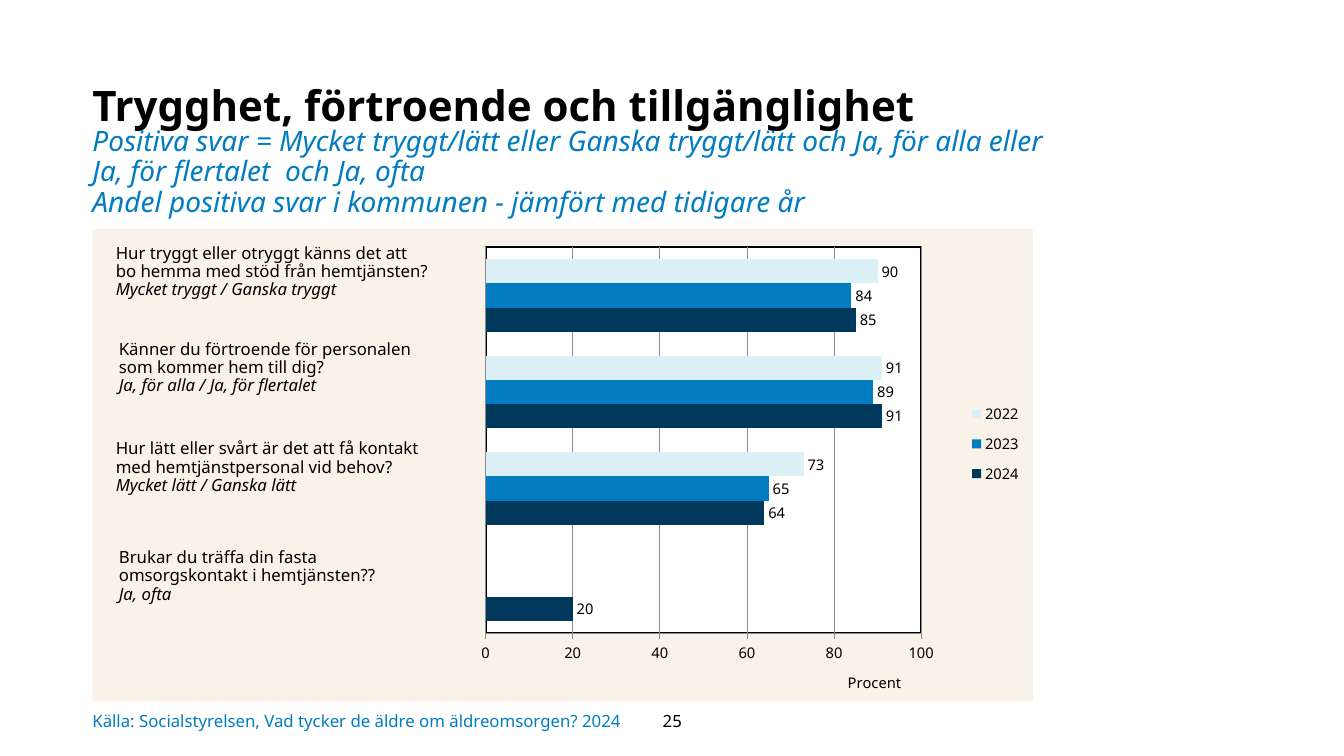
import pptx
import pptx.chart.data
import pptx.dml.color
import pptx.enum.chart
import pptx.enum.text
import pptx.oxml
import pptx.oxml.ns
import pptx.util

Pt = pptx.util.Pt
RGBColor = pptx.dml.color.RGBColor
FONT = "Noto Sans"
BLACK = RGBColor(0x00, 0x00, 0x00)
BLUE = RGBColor(0x01, 0x7C, 0xC1)
NAVY = RGBColor(0x00, 0x38, 0x5C)
PALE_BLUE = RGBColor(0xDB, 0xF0, 0xF6)
GREY = RGBColor(0x8C, 0x8C, 0x8C)
CREAM = RGBColor(0xF8, 0xF2, 0xE8)
WHITE = RGBColor(0xFF, 0xFF, 0xFF)

deck = pptx.Presentation()
deck.slide_width, deck.slide_height = Pt(960), Pt(540)
page = deck.slides.add_slide(deck.slide_layouts[6])


def add_text(left, top, width, height, lines, size, color=BLACK, bold=False,
             spacing=1.0, inset=0, middle=False):
    """Add a text box; lines holds (text, italic) pairs, one per paragraph."""
    box = page.shapes.add_textbox(Pt(left), Pt(top), Pt(width), Pt(height))
    frame = box.text_frame
    frame.word_wrap = True
    frame.margin_left = frame.margin_right = Pt(inset)
    frame.margin_top = frame.margin_bottom = Pt(inset / 2)
    if middle:
        frame.vertical_anchor = pptx.enum.text.MSO_ANCHOR.MIDDLE
    for index, (text, italic) in enumerate(lines):
        para = frame.add_paragraph() if index else frame.paragraphs[0]
        para.text = text
        para.line_spacing = spacing
        font = para.font
        font.name, font.size, font.bold, font.italic = FONT, Pt(size), bold, italic
        font.color.rgb = color
    return box


def set_layout(element, index, left, top, width=None, height=None, inner=False):
    """Place a chart part by fractions of the chart's size."""
    for old in element.findall(pptx.oxml.ns.qn("c:layout")):
        element.remove(old)
    values = {"x": left, "y": top, "w": width, "h": height}
    shown = {key: value for key, value in values.items() if value is not None}
    target = '<c:layoutTarget val="inner"/>' if inner else ""
    modes = "".join(f'<c:{key}Mode val="edge"/>' for key in shown if key in "xy")
    sizes = "".join(f'<c:{key} val="{value}"/>' for key, value in shown.items())
    element.insert(index, pptx.oxml.parse_xml(
        f'<c:layout {pptx.oxml.ns.nsdecls("c")}><c:manualLayout>'
        f"{target}{modes}{sizes}</c:manualLayout></c:layout>"))


add_text(66, 53.5, 718, 40, [("Trygghet, förtroende och tillgänglighet", False)],
         30, bold=True, spacing=1.1)
add_text(66, 91, 697, 75, [
    ("Positiva svar = Mycket tryggt/lätt eller Ganska tryggt/lätt och Ja, för alla "
     "eller Ja, för flertalet  och Ja, ofta", True),
    ("Andel positiva svar i kommunen - jämfört med tidigare år", True),
], 20, BLUE, spacing=0.9)

# Categories run from the bottom of the chart upwards
data = pptx.chart.data.CategoryChartData()
data.categories = ["1", "2", "3", "4"]
data.add_series("2024", (20, 64, 91, 85))
data.add_series("2023", (None, 65, 89, 84))
data.add_series("2022", (None, 73, 91, 90))
chart = page.shapes.add_chart(pptx.enum.chart.XL_CHART_TYPE.BAR_CLUSTERED,
                              Pt(66), Pt(163.5), Pt(672), Pt(337.5), data).chart
chart.has_title = False
chart.font.name, chart.font.size = FONT, Pt(10.5)
chart.font.color.rgb = BLACK

plot = chart.plots[0]
plot.gap_width, plot.overlap = 100, 0
plot.vary_by_categories = False
for series, color in zip(plot.series, (NAVY, BLUE, PALE_BLUE)):
    series.format.fill.solid()
    series.format.fill.fore_color.rgb = color
    labels = series.data_labels
    labels.show_value = True
    labels.position = pptx.enum.chart.XL_LABEL_POSITION.OUTSIDE_END
    labels.font.name, labels.font.size = FONT, Pt(10.5)
    labels.font.color.rgb = BLACK

chart.category_axis.visible = False
axis = chart.value_axis
axis.minimum_scale, axis.maximum_scale, axis.major_unit = 0, 100, 20
axis.major_tick_mark = pptx.enum.chart.XL_TICK_MARK.OUTSIDE
axis.has_major_gridlines = True
for line in (axis.format.line, axis.major_gridlines.format.line):
    line.color.rgb = GREY
    line.width = Pt(0.5)
axis.axis_title.text_frame.text = "Procent"
title_font = axis.axis_title.text_frame.paragraphs[0].font
title_font.name, title_font.size, title_font.bold = FONT, Pt(10.5), False
title_font.color.rgb = BLACK

chart.has_legend = True
legend = chart.legend
legend.position = pptx.enum.chart.XL_LEGEND_POSITION.RIGHT
legend.include_in_layout = False
legend.font.name, legend.font.size = FONT, Pt(10.5)
legend.font.color.rgb = BLACK

chart_space = chart.element
plot_area = chart_space.find(".//" + pptx.oxml.ns.qn("c:plotArea"))
axis_title = plot_area.find(".//" + pptx.oxml.ns.qn("c:title"))
legend_part = chart_space.find(".//" + pptx.oxml.ns.qn("c:legend"))
set_layout(plot_area, 0, 0.418, 0.039, 0.463, 0.817, inner=True)
set_layout(axis_title, 1, 0.8, 0.93)
set_layout(legend_part, 1, 0.925, 0.35, 0.07, 0.21)

backgrounds = []
for fill, outline in (
        (CREAM, "<a:ln><a:noFill/></a:ln>"),
        (WHITE, f'<a:ln w="{Pt(1.5)}"><a:solidFill><a:srgbClr val="{BLACK}"/>'
                "</a:solidFill></a:ln>")):
    backgrounds.append(pptx.oxml.parse_xml(
        f'<c:spPr {pptx.oxml.ns.nsdecls("c", "a")}><a:solidFill>'
        f'<a:srgbClr val="{fill}"/></a:solidFill>{outline}</c:spPr>'))
chart_space.find(pptx.oxml.ns.qn("c:chart")).addnext(backgrounds[0])
plot_area.append(backgrounds[1])

questions = [
    (75.6, 171.4, "Hur tryggt eller otryggt känns det att\vbo hemma med stöd från hemtjänsten?",
     "Mycket tryggt / Ganska tryggt"),
    (77.8, 239.8, "Känner du förtroende för personalen\vsom kommer hem till dig?",
     "Ja, för alla / Ja, för flertalet"),
    (75.6, 311, "Hur lätt eller svårt är det att få kontakt\vmed hemtjänstpersonal vid behov?",
     "Mycket lätt / Ganska lätt"),
    (77.8, 388.8, "Brukar du träffa din fasta omsorgskontakt i hemtjänsten??", "Ja, ofta"),
]
for left, top, question, answer in questions:
    add_text(left, top, 240, 51, [(question, False), (answer, True)], 12,
             spacing=0.9, inset=7.2)

add_text(66, 501, 425.5, 28,
         [("Källa: Socialstyrelsen, Vad tycker de äldre om äldreomsorgen? 2024", False)],
         12, BLUE, middle=True)
number = add_text(443.5, 500.4, 73.4, 28.8, [("25", False)], 12, inset=7.2, middle=True)
number.text_frame.paragraphs[0].alignment = pptx.enum.text.PP_ALIGN.CENTER

deck.save("out.pptx")
